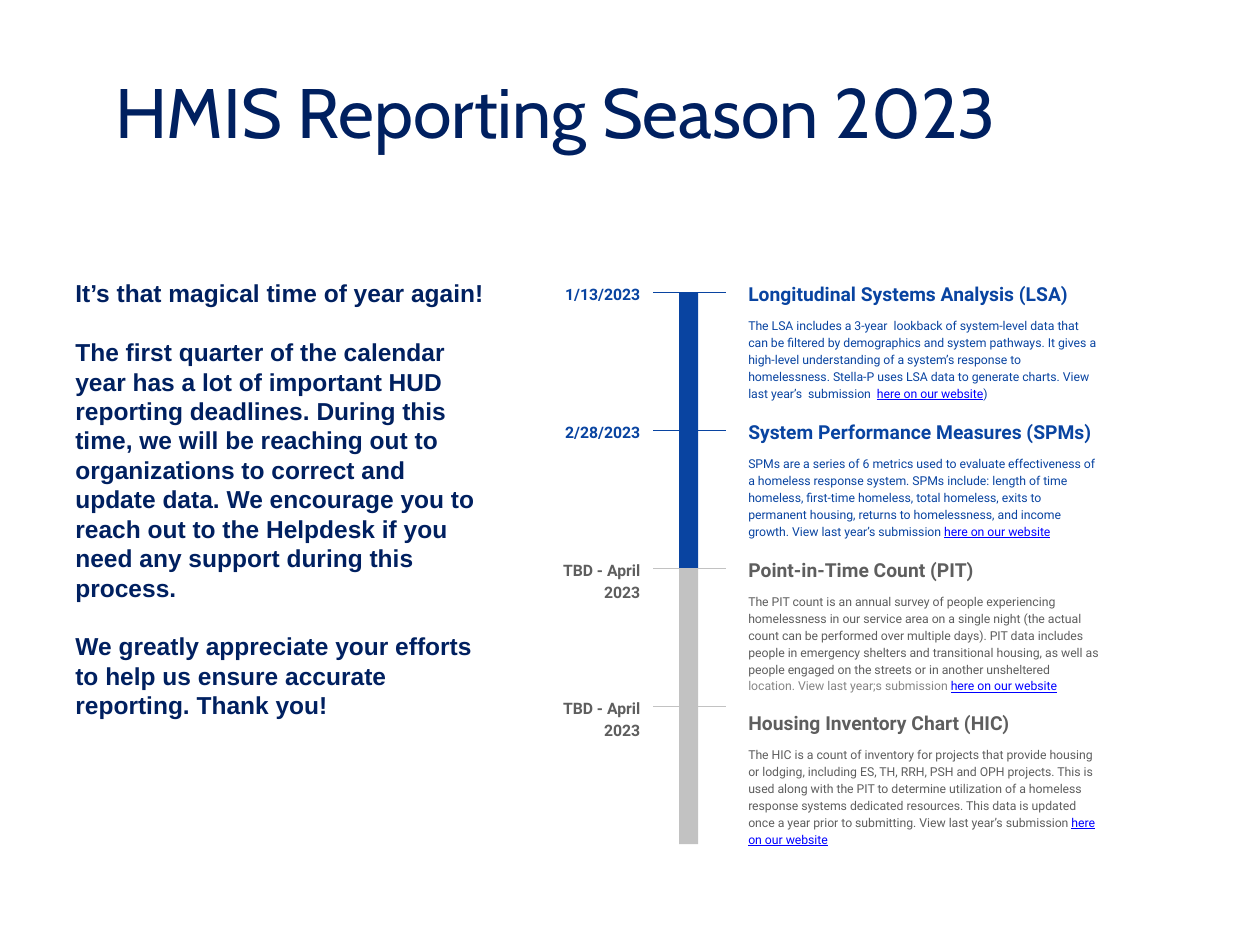
"""Build the HMIS reporting season slide with a four-step deadline timeline."""
from lxml import etree
from pptx import Presentation
from pptx.dml.color import RGBColor
from pptx.enum import shapes, text
from pptx.oxml.ns import qn
from pptx.util import Inches, Pt

COLORS = {"navy": "002060", "blue": "0944A1", "silver": "C2C2C2",
          "gray": "5E5E5E", "light": "858585", "link": "0000FF"}
TITLE = "HMIS Reporting Season 2023"
MESSAGE = [
    "It’s that magical time of year again!",
    "The first quarter of the calendar year has a lot of important HUD reporting "
    "deadlines. During this time, we will be reaching out to organizations to correct "
    "and update data. We encourage you to reach out to the Helpdesk if you need any "
    "support during this process.",
    "We greatly appreciate your efforts to help us ensure accurate reporting. Thank you!",
]
LINK = ("here on our website", "link")
DEADLINES = [
    {"date": "1/13/2023", "name": "Longitudinal Systems Analysis (LSA)",
     "bar": "blue", "ink": "blue", "drop": 0,
     "details": [(
         "The LSA includes a 3-year  lookback of system-level data that can be filtered by "
         "demographics and system pathways. It gives a high-level understanding of a "
         "system’s response to homelessness. Stella-P uses LSA data to generate charts. "
         "View last year’s  submission  ", "blue"), LINK, (")", "blue")]},
    {"date": "2/28/2023", "name": "System Performance Measures (SPMs)",
     "bar": "blue", "ink": "blue", "drop": 0,
     "details": [(
         "SPMs are a series of 6 metrics used to evaluate effectiveness of a homeless "
         "response system. SPMs include: length of time homeless, first-time homeless, "
         "total homeless, exits to permanent housing, returns to homelessness, and income "
         "growth. View last year’s submission ", "blue"), LINK]},
    {"date": "TBD - April 2023", "name": "Point-in-Time Count (PIT)",
     "bar": "silver", "ink": "gray", "drop": 0,
     "details": [(
         "The PIT count is an annual survey of people experiencing homelessness in our "
         "service area on a single night (the actual count can be performed over multiple "
         "days). PIT data includes people in emergency shelters and transitional housing, "
         "as well as people engaged on the streets or in another unsheltered", "gray"),
         (" location. View last year;s submission ", "light"), LINK]},
    {"date": "TBD - April 2023", "name": "Housing Inventory Chart (HIC)",
     "bar": "silver", "ink": "gray", "drop": 0.12,
     "details": [(
         "The HIC is a count of inventory for projects that provide housing or lodging, "
         "including ES, TH, RRH, PSH and OPH projects. This is used along with the PIT to "
         "determine utilization of a homeless response systems dedicated resources. This "
         "data is updated once a year prior to submitting. View last year’s submission ",
         "gray"), LINK]},
]
TIMELINE_TOP, STEP = 2.32, 1.095
BAR_LEFT, BAR_WIDTH = 5.39, 0.15
TICK_LEFT, TICK_RIGHT = 5.18, 5.76
DETAIL_LEFT, DETAIL_WIDTH = 5.84, 2.98


def color(name):
    return RGBColor.from_string(COLORS[name])


def set_frame(frame, anchor=text.MSO_ANCHOR.TOP):
    frame.word_wrap = True
    frame.auto_size = text.MSO_AUTO_SIZE.NONE
    frame.vertical_anchor = anchor
    frame.margin_left = frame.margin_right = Inches(0.1)
    frame.margin_top = frame.margin_bottom = Inches(0.1)


def set_font(font, face, size, ink=None, bold=False):
    font.name, font.size, font.bold = face, Pt(size), bold
    if ink:
        font.color.rgb = color(ink)


def add_text(slide, box, paragraphs, face, size, ink=None, bold=False,
             align=text.PP_ALIGN.LEFT, spacing=None, gap=0):
    frame = slide.shapes.add_textbox(*map(Inches, box)).text_frame
    set_frame(frame)
    for index, runs in enumerate(paragraphs):
        paragraph = frame.add_paragraph() if index else frame.paragraphs[0]
        paragraph.alignment = align
        if spacing:
            paragraph.line_spacing = spacing
        if index:
            paragraph.space_before = Pt(gap)
        set_font(paragraph.font, face, size, ink, bold)
        for words, run_ink in runs:
            run = paragraph.add_run()
            run.text = words
            if run_ink:
                run.font.color.rgb = color(run_ink)
            if run_ink == "link":
                run.font.underline = True


def add_deadline(slide, deadline, top):
    bar = slide.shapes.add_shape(
        shapes.MSO_SHAPE.RECTANGLE, Inches(BAR_LEFT), Inches(top),
        Inches(BAR_WIDTH), Inches(STEP))
    bar.shadow.inherit = False
    bar.fill.solid()
    bar.fill.fore_color.rgb = color(deadline["bar"])
    bar.line.fill.background()

    tick = slide.shapes.add_connector(
        shapes.MSO_CONNECTOR.STRAIGHT, Inches(TICK_RIGHT), Inches(top),
        Inches(TICK_LEFT), Inches(top))
    tick.line.color.rgb = color(deadline["bar"])
    tick.line.width = Pt(0.75)
    etree.SubElement(tick._element.spPr, qn("a:effectLst"))

    name_top = top - 0.21 + deadline["drop"]
    add_text(slide, (DETAIL_LEFT, name_top, DETAIL_WIDTH, 0.3),
             [[(deadline["name"], None)]], "Roboto", 11, deadline["ink"], True, spacing=1.15)
    add_text(slide, (DETAIL_LEFT, name_top + 0.3, DETAIL_WIDTH, 0.45),
             [deadline["details"]], "Roboto", 7, spacing=1.15)
    add_text(slide, (4.35, top - 0.18, 0.83, 0.38), [[(deadline["date"], None)]],
             "Roboto", 9, deadline["ink"], True, text.PP_ALIGN.RIGHT, 1.15)


def main():
    deck = Presentation()
    deck.slide_width, deck.slide_height = Inches(10), Inches(7.5)
    slide = deck.slides.add_slide(deck.slide_layouts[5])

    title = slide.shapes.title
    title.left, title.top, title.width, title.height = map(Inches, (0.16, 0.07, 8.5, 1.61))
    set_frame(title.text_frame, text.MSO_ANCHOR.MIDDLE)
    heading = title.text_frame.paragraphs[0]
    heading.text = TITLE
    heading.alignment = text.PP_ALIGN.CENTER
    set_font(heading.font, "Cabin", 40, "navy")

    for index, deadline in enumerate(DEADLINES):
        add_deadline(slide, deadline, TIMELINE_TOP + index * STEP)

    add_text(slide, (0.5, 2.11, 3.46, 3.74), [[(words, None)] for words in MESSAGE],
             "Arial", 14, "navy", True, gap=16.8)
    deck.save("out.pptx")


if __name__ == "__main__":
    main()
